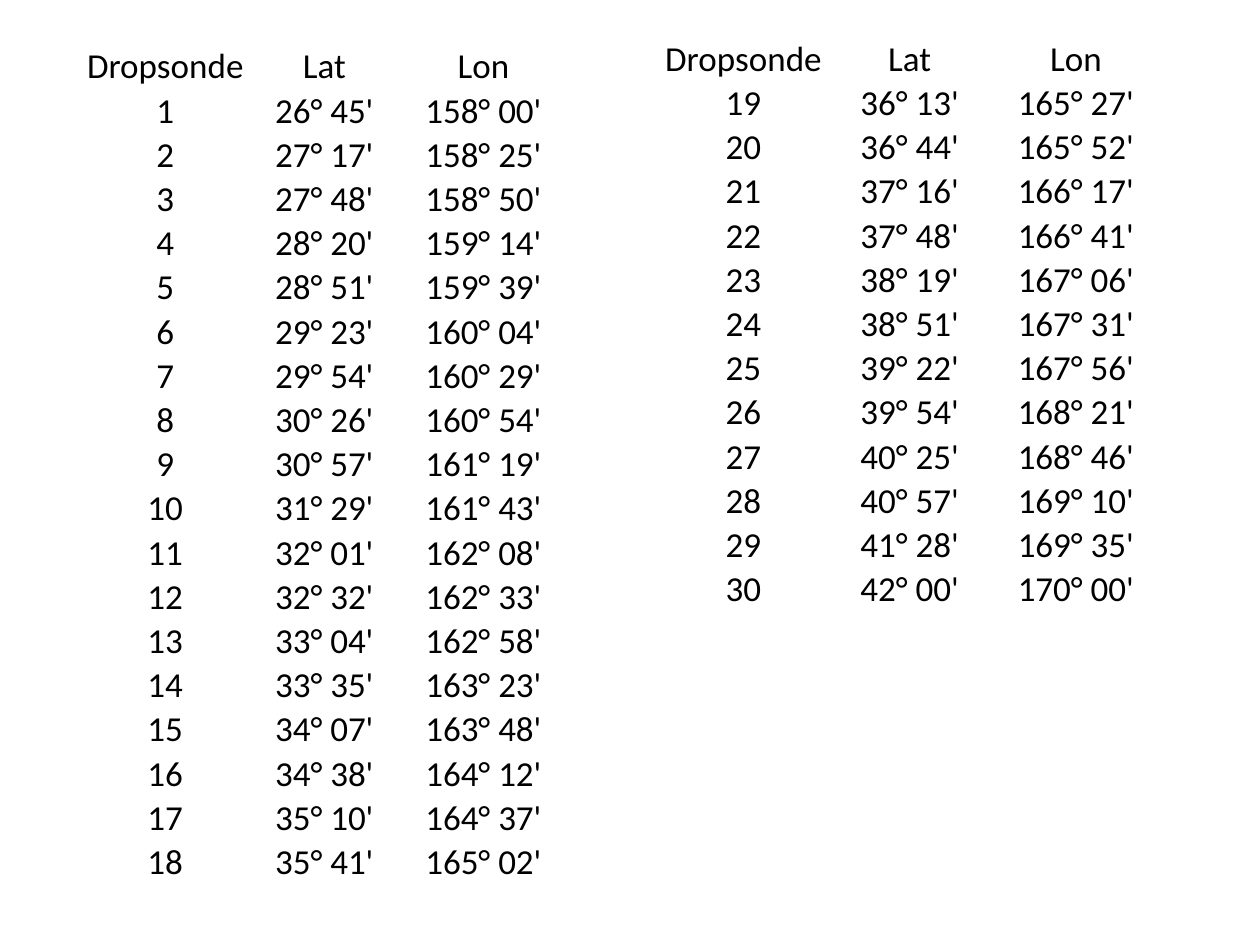
import pptx
import pptx.util
import pptx.dml.color
import pptx.enum.text

Pt = pptx.util.Pt

HEADINGS = ("Dropsonde", "Lat", "Lon")
POSITIONS = [
    ("26° 45'", "158° 00'"),
    ("27° 17'", "158° 25'"),
    ("27° 48'", "158° 50'"),
    ("28° 20'", "159° 14'"),
    ("28° 51'", "159° 39'"),
    ("29° 23'", "160° 04'"),
    ("29° 54'", "160° 29'"),
    ("30° 26'", "160° 54'"),
    ("30° 57'", "161° 19'"),
    ("31° 29'", "161° 43'"),
    ("32° 01'", "162° 08'"),
    ("32° 32'", "162° 33'"),
    ("33° 04'", "162° 58'"),
    ("33° 35'", "163° 23'"),
    ("34° 07'", "163° 48'"),
    ("34° 38'", "164° 12'"),
    ("35° 10'", "164° 37'"),
    ("35° 41'", "165° 02'"),
    ("36° 13'", "165° 27'"),
    ("36° 44'", "165° 52'"),
    ("37° 16'", "166° 17'"),
    ("37° 48'", "166° 41'"),
    ("38° 19'", "167° 06'"),
    ("38° 51'", "167° 31'"),
    ("39° 22'", "167° 56'"),
    ("39° 54'", "168° 21'"),
    ("40° 25'", "168° 46'"),
    ("40° 57'", "169° 10'"),
    ("41° 28'", "169° 35'"),
    ("42° 00'", "170° 00'"),
]
DROPSONDES = [
    (str(number), lat, lon) for number, (lat, lon) in enumerate(POSITIONS, start=1)
]
LEFT_COUNT = 18
TABLES = [
    {"left": 48.96, "top": 25.2, "column": 90.96,
     "rows": [HEADINGS, *DROPSONDES[:LEFT_COUNT], ("", "", "")]},
    {"left": 377.28, "top": 20.88, "column": 95.04,
     "rows": [HEADINGS, *DROPSONDES[LEFT_COUNT:]]},
]
ROW_HEIGHT = 24.62
INSET = 0.75


def color(value):
    return pptx.dml.color.RGBColor.from_string(value)


def fill_cell(cell, text):
    cell.fill.background()
    cell.vertical_anchor = pptx.enum.text.MSO_ANCHOR.BOTTOM
    cell.margin_left = cell.margin_right = cell.margin_top = Pt(INSET)
    cell.margin_bottom = 0
    cell.text = text
    para = cell.text_frame.paragraphs[0]
    para.alignment = pptx.enum.text.PP_ALIGN.CENTER
    para.font.name = "Calibri"
    para.font.size = Pt(20)
    para.font.color.rgb = color("000000")


def add_position_table(page, left, top, column, rows):
    table = page.shapes.add_table(
        len(rows), len(HEADINGS), Pt(left), Pt(top),
        Pt(column * len(HEADINGS)), Pt(ROW_HEIGHT * len(rows)),
    ).table
    table.first_row = False
    table.horz_banding = False
    for row, texts in zip(table.rows, rows):
        for cell, text in zip(row.cells, texts):
            fill_cell(cell, text)


def main():
    deck = pptx.Presentation()
    deck.slide_width = Pt(720)
    deck.slide_height = Pt(540)
    page = deck.slides.add_slide(deck.slide_layouts[6])
    for table in TABLES:
        add_position_table(page, **table)
    deck.save("out.pptx")


if __name__ == "__main__":
    main()
